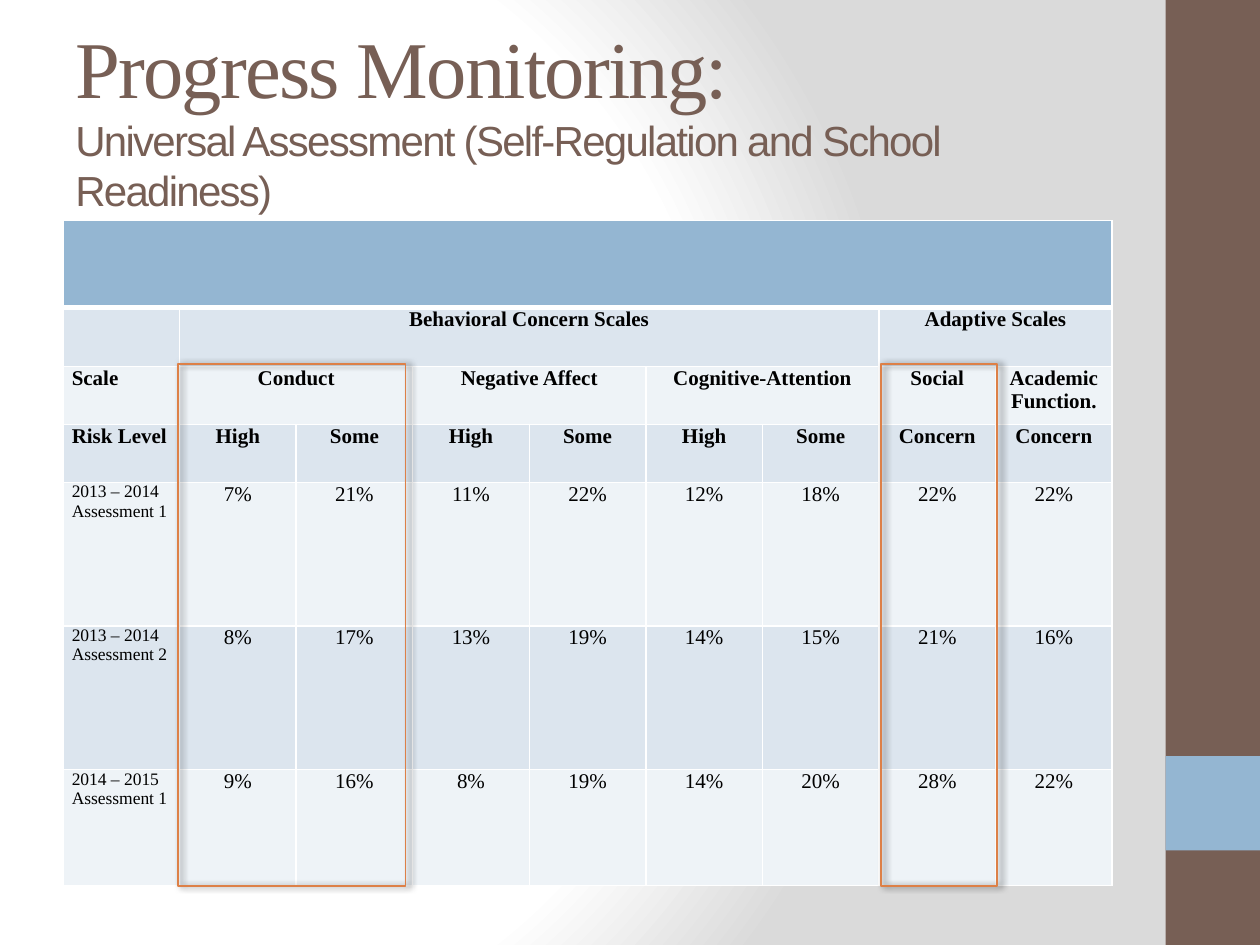
from lxml.etree import SubElement
from pptx import Presentation
from pptx.dml.color import RGBColor
from pptx.enum.shapes import MSO_SHAPE as Shape
from pptx.enum.text import MSO_ANCHOR as Anchor, PP_ALIGN as Align
from pptx.oxml import parse_xml
from pptx.oxml.ns import nsdecls, qn
from pptx.util import Inches, Pt

BROWN, BLUE, ORANGE = "775F55", "94B6D2", "DD8047"
WHITE, BLACK, BACKDROP_GREY = "FFFFFF", "000000", "DADADA"
BAND_DARK, BAND_LIGHT = "DCE5EE", "EEF3F7"
SERIF, SANS = "Times New Roman", "Arial"

COLUMN_WIDTH = 8.33 / 9
ROW_HEIGHTS = [0.69, 0.47, 0.46, 0.46, 1.14, 1.14, 0.92]
HEADING_ROWS = 4
ASSESSMENTS = [
    ["", "", "", "", "", "", "", "", ""],
    ["", "Behavioral Concern Scales", "", "", "", "", "", "Adaptive Scales", ""],
    ["Scale", "Conduct", "", "Negative Affect", "", "Cognitive-Attention", "",
     "Social", "Academic Function."],
    ["Risk Level", *["High", "Some"] * 3, "Concern", "Concern"],
    ["2013 – 2014\nAssessment 1", "7%", "21%", "11%", "22%", "12%", "18%", "22%", "22%"],
    ["2013 – 2014\nAssessment 2", "8%", "17%", "13%", "19%", "14%", "15%", "21%", "16%"],
    ["2014 – 2015\nAssessment 1", "9%", "16%", "8%", "19%", "14%", "20%", "28%", "22%"],
]
# (row, first column, last column)
MERGES = [(0, 0, 8), (1, 1, 6), (1, 7, 8), (2, 1, 2), (2, 3, 4), (2, 5, 6)]


def color(hex_value):
    return RGBColor.from_string(hex_value)


class SlideBuilder:
    def __init__(self, slide):
        self.slide = slide

    def format_run(self, run, font, size, hex_value, bold=False):
        run.font.name, run.font.size, run.font.bold = font, Pt(size), bold
        run.font.color.rgb = color(hex_value)

    def backdrop(self):
        """Fill the background with a radial gradient centred left of the middle."""
        self.slide.background.fill.solid()
        properties = self.slide.element.find(".//" + qn("p:bgPr"))
        stops = "".join(
            f'<a:gs pos="{position * 1000}"><a:srgbClr val="{shade}"/></a:gs>'
            for position, shade in [(0, WHITE), (75, WHITE), (100, BACKDROP_GREY)])
        properties.replace(properties[0], parse_xml(
            f'<a:gradFill {nsdecls("a")} rotWithShape="1"><a:gsLst>{stops}</a:gsLst>'
            '<a:path path="circle"><a:fillToRect l="20000" t="50000" r="100000" b="50000"/>'
            '</a:path></a:gradFill>'))

    def rectangle(self, left, top, width, height):
        box = self.slide.shapes.add_shape(
            Shape.RECTANGLE, Inches(left), Inches(top), Inches(width), Inches(height))
        box.shadow.inherit = False
        return box

    def panel(self, left, top, width, height, fill):
        panel = self.rectangle(left, top, width, height)
        panel.fill.solid()
        panel.fill.fore_color.rgb = color(fill)
        panel.line.fill.background()

    def highlight(self, left, top, width, height):
        """Frame table columns with a shadowed outline."""
        frame = self.rectangle(left, top, width, height)
        frame.fill.background()
        frame.line.color.rgb = color(ORANGE)
        frame.line.width = Pt(1)
        effects = frame.element.spPr.find(qn("a:effectLst"))
        shadow = SubElement(effects, qn("a:outerShdw"), blurRad=str(Pt(4)),
                            dist=str(Pt(2)), dir="0", rotWithShape="0")
        shade = SubElement(shadow, qn("a:srgbClr"), val=BLACK)
        SubElement(shade, qn("a:alpha"), val="60000")

    def title(self, heading, subheading):
        box = self.slide.shapes.add_textbox(
            Inches(0.5), Inches(0.3), Inches(8.33), Inches(1.25))
        frame = box.text_frame
        frame.word_wrap = True
        frame.vertical_anchor = Anchor.MIDDLE
        paragraph = frame.paragraphs[0]
        paragraph.text = f"{heading}\v{subheading}"
        for run, font, size in zip(paragraph.runs, (SERIF, SANS), (46, 24)):
            self.format_run(run, font, size, BROWN)
            run.font._element.set("spc", "-100")

    def cell_borders(self, cell, widths):
        properties = cell._tc.get_or_add_tcPr()
        for side, width in widths.items():
            line = SubElement(properties, qn(f"a:ln{side}"), w=str(Pt(width)))
            fill = SubElement(line, qn("a:solidFill"))
            SubElement(fill, qn("a:srgbClr"), val=WHITE)

    def cell(self, cell, row, column, text):
        cell.margin_left = cell.margin_right = Inches(0.07)
        cell.margin_top = cell.margin_bottom = 0
        self.cell_borders(cell, {"L": 1, "R": 1, "T": 3 if row == 1 else 1,
                                 "B": 3 if row == 0 else 1})
        cell.fill.solid()
        band = BAND_DARK if row % 2 else BAND_LIGHT
        cell.fill.fore_color.rgb = color(band if row else BLUE)
        if not text:
            return
        is_heading = row < HEADING_ROWS
        size = 12 if is_heading or column else 10
        cell.text_frame.text = text
        for paragraph in cell.text_frame.paragraphs:
            paragraph.alignment = Align.CENTER if column else Align.LEFT
            self.format_run(paragraph.runs[0], SERIF, size, BLACK, is_heading)

    def table(self, left, top, rows):
        table = self.slide.shapes.add_table(
            len(rows), len(rows[0]), Inches(left), Inches(top),
            Inches(COLUMN_WIDTH * len(rows[0])), Inches(sum(ROW_HEIGHTS))).table
        table.first_row = table.horz_banding = False
        for column in table.columns:
            column.width = Inches(COLUMN_WIDTH)
        for row, height in zip(table.rows, ROW_HEIGHTS):
            row.height = Inches(height)
        for row, first, last in MERGES:
            table.cell(row, first).merge(table.cell(row, last))
        for r, values in enumerate(rows):
            for c, text in enumerate(values):
                self.cell(table.cell(r, c), r, c, text)


def main():
    deck = Presentation()
    deck.slide_width, deck.slide_height = Inches(10), Inches(7.5)
    builder = SlideBuilder(deck.slides.add_slide(deck.slide_layouts[6]))
    builder.backdrop()
    builder.panel(9.25, 0, 0.75, 7.5, BROWN)
    builder.panel(9.25, 6, 0.75, 0.75, BLUE)
    builder.title("Progress Monitoring:",
                  "Universal Assessment (Self-Regulation and School Readiness)")
    builder.table(0.5, 1.75, ASSESSMENTS)
    for left, width in [(1.41, 1.81), (6.99, 0.92)]:
        builder.highlight(left, 2.89, width, 4.14)
    deck.save("out.pptx")


if __name__ == "__main__":
    main()
